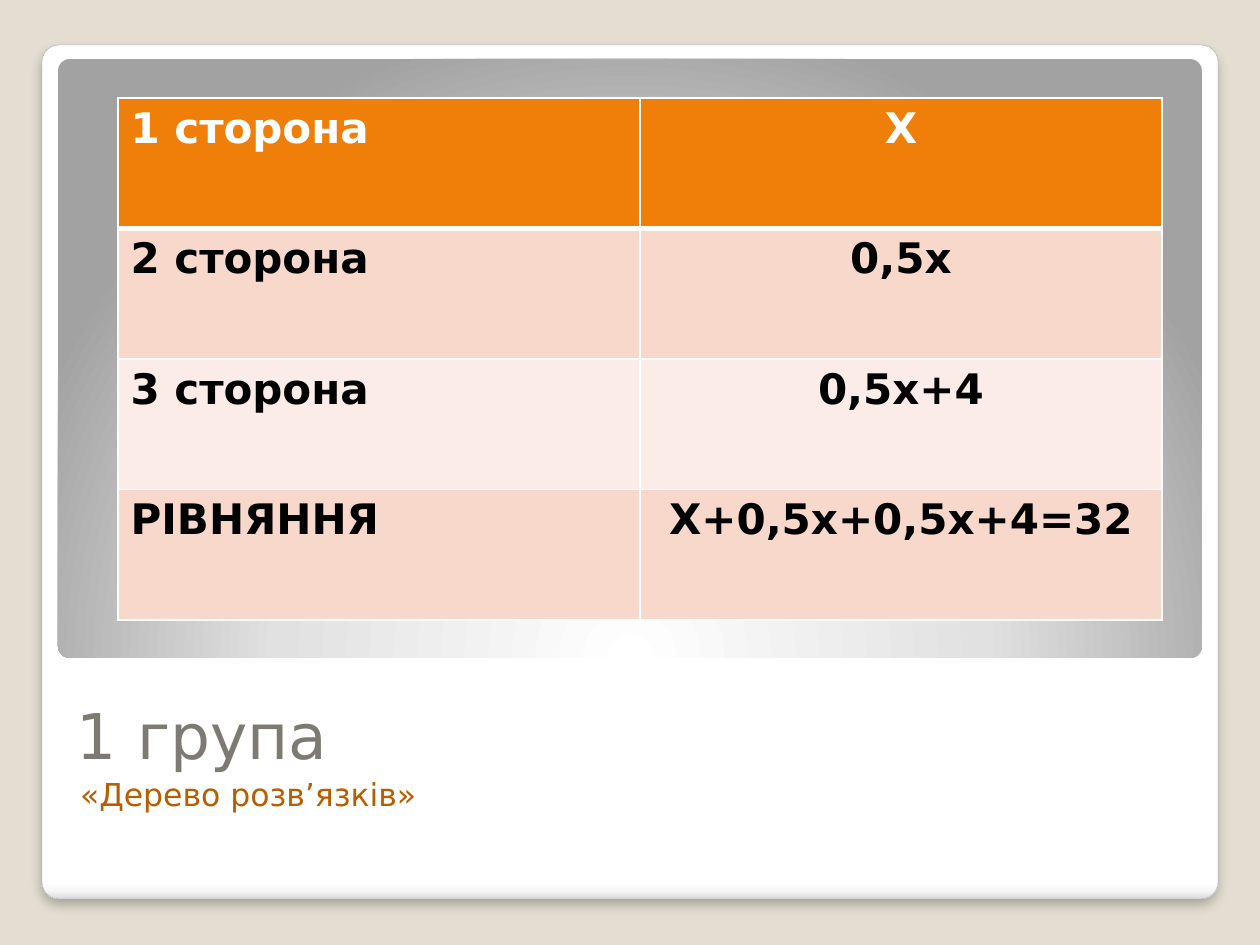
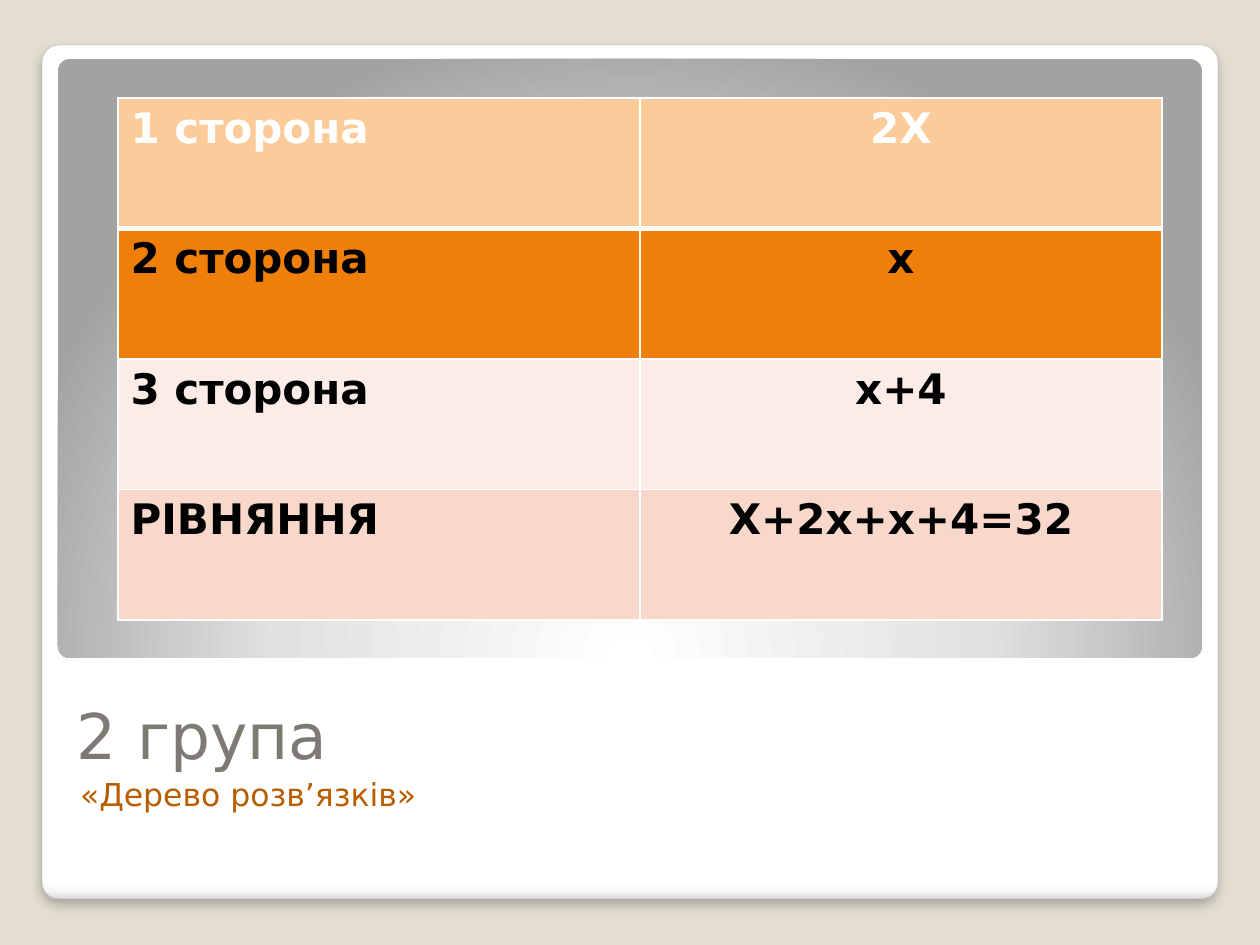
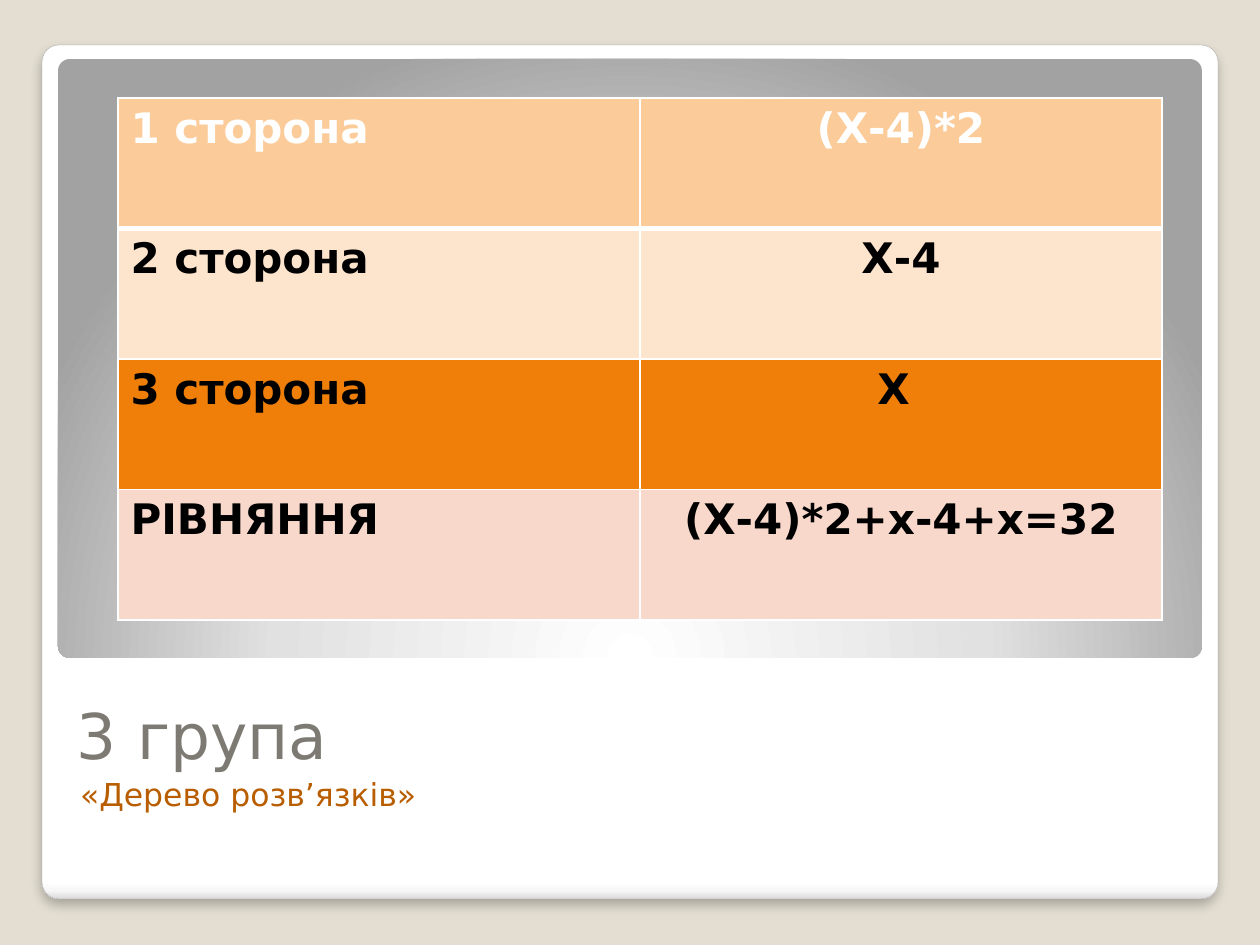
import dataclasses

import pptx
import pptx.dml.color
import pptx.enum.shapes
import pptx.enum.text
import pptx.oxml
import pptx.oxml.ns
import pptx.util

EMU_PER_PX = 914400 / 126


@dataclasses.dataclass(frozen=True)
class Theme:
    font: str = "DejaVu Sans"
    title_size: int = 36
    subtitle_size: int = 18
    cell_size: int = 24
    background: str = "E3DED1"
    frame_line: str = "A4A4A4"
    title: str = "7C7A72"
    subtitle: str = "B85E00"
    text: str = "000000"
    white: str = "FFFFFF"
    orange: str = "F07F09"
    light_orange: str = "FBCC9A"
    pale_orange: str = "FDE5CD"
    pink: str = "F9D8CC"
    pale_pink: str = "FCECE7"


THEME = Theme()
SUBTITLE = "«Дерево розв’язків»"
ROW_LABELS = ("1 сторона", "2 сторона", "3 сторона", "РІВНЯННЯ")
GROUPS = (
    ("1 група",
     ("Х", "0,5х", "0,5х+4", "Х+0,5х+0,5х+4=32"),
     (THEME.orange, THEME.pink, THEME.pale_pink, THEME.pink)),
    ("2 група",
     ("2Х", "х", "х+4", "Х+2х+х+4=32"),
     (THEME.light_orange, THEME.orange, THEME.pale_pink, THEME.pink)),
    ("3 група",
     ("(Х-4)*2", "Х-4", "Х ", "(Х-4)*2+х-4+х=32"),
     (THEME.light_orange, THEME.pale_orange, THEME.orange, THEME.pink)),
)


def px(n):
    return pptx.util.Emu(round(n * EMU_PER_PX))


def box(*lengths):
    return [px(n) for n in lengths]


def rgb(color):
    return pptx.dml.color.RGBColor.from_string(color)


def xml(markup):
    """Parse one DrawingML element, declaring its namespace on the root tag."""
    tag, rest = markup.split(" ", 1)
    return pptx.oxml.parse_xml(f"{tag} {pptx.oxml.ns.nsdecls('a')} {rest}")


def add_run(p, text, size, color, bold=False):
    r = p.add_run()
    r.text = text
    r.font.name = THEME.font
    r.font.size = pptx.util.Pt(size)
    r.font.bold = bold
    r.font.color.rgb = rgb(color)


def add_panel(s, position, stops, direction):
    """Add a rounded panel with gradient stops given as (percent, colour)."""
    sp = s.shapes.add_shape(pptx.enum.shapes.MSO_SHAPE.ROUNDED_RECTANGLE, *box(*position))
    sp.adjustments[0] = 0.02
    sp.line.fill.background()
    sp.shadow.inherit = False
    sp.fill.background()
    stop_list = "".join(
        f'<a:gs pos="{percent * 1000}"><a:srgbClr val="{color}"/></a:gs>'
        for percent, color in stops)
    gradient = xml(f'<a:gradFill rotWithShape="1"><a:gsLst>{stop_list}</a:gsLst>'
                   f'{direction}</a:gradFill>')
    sp_pr = sp.element.spPr
    sp_pr.replace(sp_pr.find(pptx.oxml.ns.qn("a:noFill")), gradient)
    return sp


def add_drop_shadow(sp):
    effects = sp.element.spPr.find(pptx.oxml.ns.qn("a:effectLst"))
    effects.append(xml(
        '<a:outerShdw blurRad="76200" dist="50800" dir="5400000" algn="tl" rotWithShape="0">'
        '<a:srgbClr val="000000"><a:alpha val="25000"/></a:srgbClr></a:outerShdw>'))


def decorate_layout(layout, s):
    """Give the layout its background and panels, drawn on s and moved behind the text."""
    layout.background.fill.solid()
    layout.background.fill.fore_color.rgb = rgb(THEME.background)
    for sp in list(layout.placeholders):
        if sp.placeholder_format.idx >= 10:
            sp.element.getparent().remove(sp.element)

    frame = add_panel(
        s, (42, 45, 1176, 854),
        ((0, THEME.white), (98, THEME.white), (99, "F7F7F7"), (100, "DADADA")),
        '<a:lin ang="5400000" scaled="0"/>')
    frame.line.color.rgb = rgb(THEME.frame_line)
    frame.line.width = pptx.util.Pt(0.16)
    add_drop_shadow(frame)
    stage = add_panel(
        s, (58, 59, 1144, 599),
        ((0, THEME.white), (55, "E1E1E1"), (100, "A2A2A2")),
        '<a:path path="circle">'
        '<a:fillToRect l="50000" t="175000" r="50000" b="-75000"/></a:path>')
    for sp in (stage, frame):
        layout.shapes.element.insert(2, sp.element)


def fill_placeholder(sp, position, margins, anchor, text, size, color):
    sp.left, sp.top, sp.width, sp.height = box(*position)
    tf = sp.text_frame
    tf.word_wrap = True
    tf.auto_size = pptx.enum.text.MSO_AUTO_SIZE.NONE
    tf.vertical_anchor = anchor
    tf.margin_left, tf.margin_top, tf.margin_right, tf.margin_bottom = box(*margins)
    p = tf.paragraphs[0]
    p_pr = p._p.get_or_add_pPr()
    p_pr.set("marL", "0")
    p_pr.set("indent", "0")
    p_pr.append(xml("<a:buNone />"))
    p.alignment = pptx.enum.text.PP_ALIGN.LEFT
    p.space_before = pptx.util.Pt(0)
    add_run(p, text, size, color)


def set_borders(cell, **widths):
    tc_pr = cell._tc.get_or_add_tcPr()
    for side, width in widths.items():
        tc_pr.append(xml(
            f'<a:ln{side} w="{pptx.util.Pt(width)}"><a:solidFill>'
            f'<a:srgbClr val="{THEME.white}"/></a:solidFill></a:ln{side}>'))


def add_side_table(s, values, fills):
    table = s.shapes.add_table(len(ROW_LABELS), 2, *box(118, 98, 1044, 522)).table
    table.horz_banding = False
    align = pptx.enum.text.PP_ALIGN
    for row, (label, value, fill) in enumerate(zip(ROW_LABELS, values, fills)):
        color = THEME.white if row == 0 else THEME.text
        for col, (text, alignment) in enumerate(((label, align.LEFT), (value, align.CENTER))):
            cell = table.cell(row, col)
            set_borders(cell, L=1, R=1, T=3 if row == 1 else 1, B=3 if row == 0 else 1)
            cell.fill.solid()
            cell.fill.fore_color.rgb = rgb(fill)
            p = cell.text_frame.paragraphs[0]
            p.alignment = alignment
            add_run(p, text, THEME.cell_size, color, bold=True)


def add_group_slide(prs, layout, title, values, fills):
    s = prs.slides.add_slide(layout)
    anchor = pptx.enum.text.MSO_ANCHOR
    fill_placeholder(s.shapes.title, (64, 679, 1128, 93), (13, 6, 13, 0),
                     anchor.BOTTOM, title, THEME.title_size, THEME.title)
    fill_placeholder(s.placeholders[1], (64, 775, 1128, 58), (16, 0, 13, 6),
                     anchor.TOP, SUBTITLE, THEME.subtitle_size, THEME.subtitle)
    add_side_table(s, values, fills)
    return s


def main():
    prs = pptx.Presentation()
    prs.slide_width, prs.slide_height = box(1260, 945)
    layout = prs.slide_layouts[1]
    slides = [add_group_slide(prs, layout, *group) for group in GROUPS]
    decorate_layout(layout, slides[0])
    prs.save("out.pptx")


if __name__ == "__main__":
    main()
